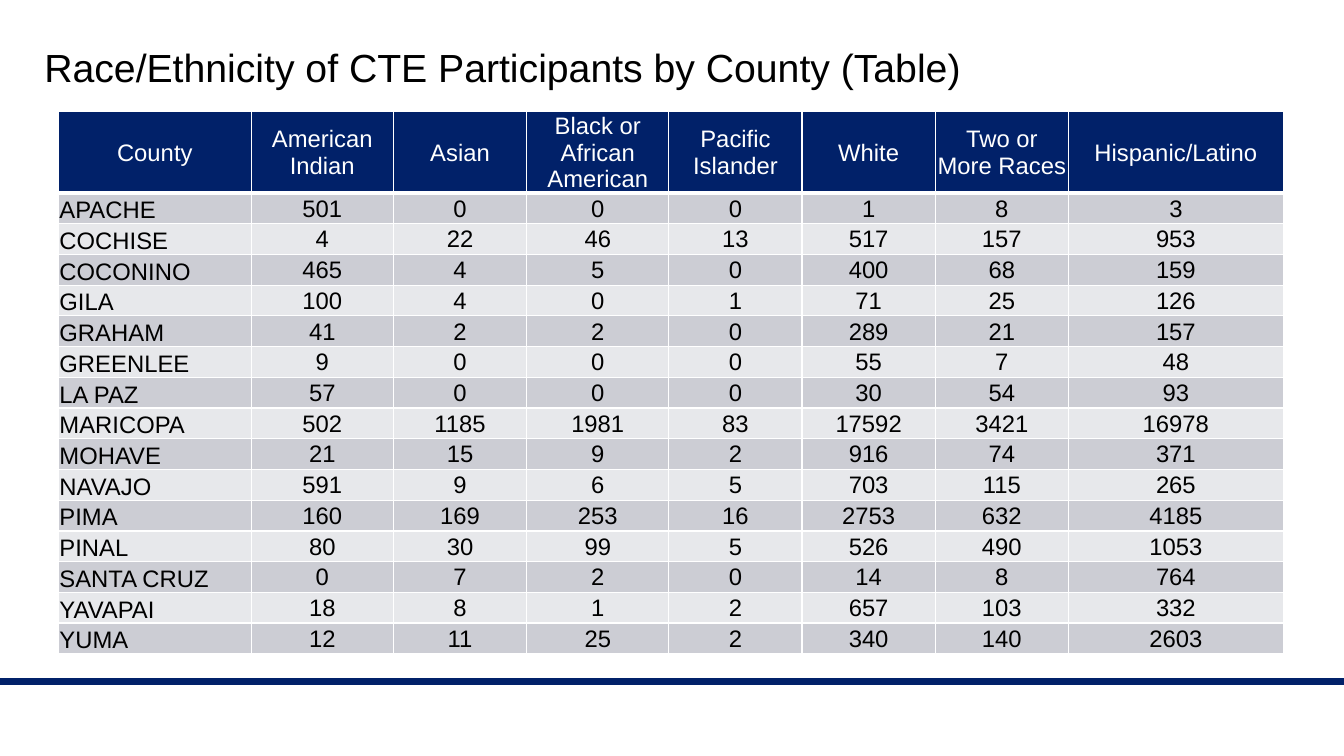
import lxml.etree
import pptx
import pptx.dml.color
import pptx.enum.shapes
import pptx.enum.text
import pptx.oxml.ns
import pptx.util

ALIGN = pptx.enum.text.PP_ALIGN
ANCHOR = pptx.enum.text.MSO_ANCHOR

HEADINGS = ["County", "American Indian", "Asian", "Black or African American",
            "Pacific Islander", "White", "Two or More Races", "Hispanic/Latino"]
COLUMN_WIDTHS = [1.91, 1.41, 1.32, 1.41, 1.32, 1.32, 1.32, 2.13]
COUNTIES = [
    ("APACHE", 501, 0, 0, 0, 1, 8, 3),
    ("COCHISE", 4, 22, 46, 13, 517, 157, 953),
    ("COCONINO", 465, 4, 5, 0, 400, 68, 159),
    ("GILA", 100, 4, 0, 1, 71, 25, 126),
    ("GRAHAM", 41, 2, 2, 0, 289, 21, 157),
    ("GREENLEE", 9, 0, 0, 0, 55, 7, 48),
    ("LA PAZ", 57, 0, 0, 0, 30, 54, 93),
    ("MARICOPA", 502, 1185, 1981, 83, 17592, 3421, 16978),
    ("MOHAVE", 21, 15, 9, 2, 916, 74, 371),
    ("NAVAJO", 591, 9, 6, 5, 703, 115, 265),
    ("PIMA", 160, 169, 253, 16, 2753, 632, 4185),
    ("PINAL", 80, 30, 99, 5, 526, 490, 1053),
    ("SANTA CRUZ", 0, 7, 2, 0, 14, 8, 764),
    ("YAVAPAI", 18, 8, 1, 2, 657, 103, 332),
    ("YUMA", 12, 11, 25, 2, 340, 140, 2603),
]


def color(hex_text):
    return pptx.dml.color.RGBColor.from_string(hex_text)


def apply(target, values):
    for name, value in values.items():
        setattr(target, name, value)


class SlideBuilder:
    """Holds the style and the slide; lengths are percentages of the slide's size."""

    navy, black, white = "012169", "000000", "FFFFFF"
    bands = ("CCCDD4", "E7E8EB")
    font_name = "Arial"

    def __init__(self, presentation):
        self.width = presentation.slide_width
        self.height = presentation.slide_height
        self.slide = presentation.slides.add_slide(presentation.slide_layouts[5])

    def across(self, percent):
        return round(self.width * percent / 100)

    def down(self, percent):
        return round(self.height * percent / 100)

    def box(self, left, top, width, height):
        return {"left": self.across(left), "top": self.down(top),
                "width": self.across(width), "height": self.down(height)}

    def style_font(self, font, size, font_color):
        apply(font, {"name": self.font_name, "size": pptx.util.Pt(size), "bold": False})
        font.color.rgb = color(font_color)

    def title(self, text, box):
        shape = self.slide.shapes.title
        apply(shape, box)
        apply(shape.text_frame, {"text": text, "word_wrap": True,
                                 "vertical_anchor": ANCHOR.MIDDLE})
        paragraph = shape.text_frame.paragraphs[0]
        apply(paragraph, {"alignment": ALIGN.LEFT, "line_spacing": 0.9})
        self.style_font(paragraph.font, 28, self.black)

    def rule(self, start, end, top, weight):
        line = self.slide.shapes.add_connector(
            pptx.enum.shapes.MSO_CONNECTOR.STRAIGHT,
            self.across(start), self.down(top), self.across(end), self.down(top))
        line.line.color.rgb = color(self.navy)
        line.line.width = pptx.util.Pt(weight)
        lxml.etree.SubElement(line._element.spPr, pptx.oxml.ns.qn("a:effectLst"))

    def borders(self, cell, bottom_weight):
        properties = cell._tc.get_or_add_tcPr()
        weights = {"a:lnL": 1, "a:lnR": 1, "a:lnT": 1, "a:lnB": bottom_weight}
        for side, weight in weights.items():
            edge = lxml.etree.SubElement(properties, pptx.oxml.ns.qn(side),
                                         w=str(pptx.util.Pt(weight)))
            fill = lxml.etree.SubElement(edge, pptx.oxml.ns.qn("a:solidFill"))
            lxml.etree.SubElement(fill, pptx.oxml.ns.qn("a:srgbClr"), val=self.white)

    def cell(self, cell, value, is_header, is_county, fill):
        inset = pptx.util.Inches(0.01)
        apply(cell, {"text": str(value), "margin_left": inset, "margin_right": inset,
                     "margin_top": inset, "margin_bottom": 0,
                     "vertical_anchor": ANCHOR.BOTTOM if is_county else ANCHOR.MIDDLE})
        self.borders(cell, 3 if is_header else 1)
        cell.fill.solid()
        cell.fill.fore_color.rgb = color(fill)
        paragraph = cell.text_frame.paragraphs[0]
        paragraph.alignment = ALIGN.LEFT if is_county else ALIGN.CENTER
        self.style_font(paragraph.font, 17, self.white if is_header else self.black)

    def table(self, rows, column_weights, header_height, box):
        table = self.slide.shapes.add_table(len(rows), len(column_weights), **box).table
        apply(table, {"first_row": True, "horz_banding": False})
        for column, weight in zip(table.columns, column_weights):
            column.width = round(box["width"] * weight / sum(column_weights))
        header = self.down(header_height)
        body = (box["height"] - header) // (len(rows) - 1)
        for row_index, values in enumerate(rows):
            is_header = row_index == 0
            table.rows[row_index].height = header if is_header else body
            fill = self.navy if is_header else self.bands[(row_index - 1) % 2]
            for column_index, value in enumerate(values):
                is_county = column_index == 0 and not is_header
                self.cell(table.cell(row_index, column_index), value,
                          is_header, is_county, fill)


def main():
    presentation = pptx.Presentation()
    presentation.slide_width = pptx.util.Inches(13.33)
    presentation.slide_height = pptx.util.Inches(7.5)
    builder = SlideBuilder(presentation)
    builder.rule(-0.22, 100.28, 90.13, 4.5)
    builder.title("Race/Ethnicity of CTE Participants by County (Table)",
                  builder.box(2.55, 3.73, 91.15, 11.07))
    builder.table([HEADINGS] + COUNTIES, COLUMN_WIDTHS, 10.73,
                  builder.box(4.35, 14.8, 91.15, 71.73))
    presentation.save("out.pptx")


if __name__ == "__main__":
    main()
